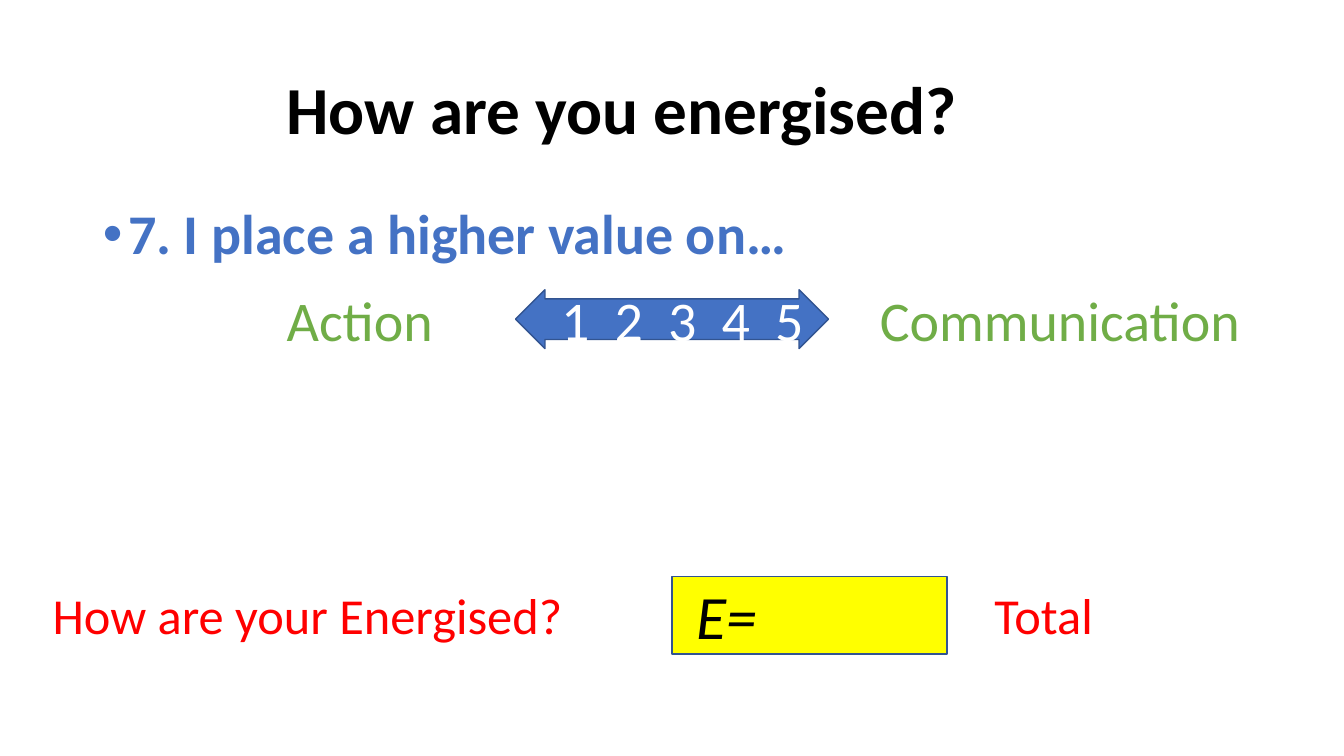
from dataclasses import dataclass
from pptx import Presentation
from pptx.dml.color import RGBColor as Rgb
from pptx.enum.shapes import MSO_SHAPE as Kind
from pptx.enum.text import MSO_ANCHOR as Anchor
from pptx.oxml.ns import qn
from pptx.util import Pt
from lxml.etree import SubElement as sub

PX = 9525  # EMU in one px, 96 px to the inch


@dataclass(frozen=True)
class Theme:
    font: str = "Calibri"
    black: str = "000000"
    white: str = "FFFFFF"
    blue: str = "4472C4"
    edge: str = "325491"
    green: str = "70AD47"
    red: str = "FF0000"
    yellow: str = "FFFF00"
    title: int = 48
    body: int = 40
    total: int = 36
    score: int = 44


LOOK = Theme()


def size(box):
    return [n * PX for n in box]


def write(shape, text, pt, color, bold=None, italic=None, anchor=Anchor.TOP,
          left=10, right=10, tabs=(), bullet=0, space=None):
    """Fill a shape with one paragraph."""
    frame = shape.text_frame
    frame.word_wrap = True
    frame.vertical_anchor = anchor
    frame.margin_left, frame.margin_right = left * PX, right * PX
    para = frame.paragraphs[0]
    para.text = text
    props = para._p.get_or_add_pPr()
    props.set("algn", "l")
    if bullet:
        props.set("marL", str(bullet * PX))
        props.set("indent", str(-bullet * PX))
        sub(props, qn("a:buFont"), typeface="Arial")
        sub(props, qn("a:buChar"), char="•")
    if tabs:
        stops = sub(props, qn("a:tabLst"))
        for pos in tabs:
            sub(stops, qn("a:tab"), pos=str(pos * PX), algn="l")
    if space:
        para.line_spacing = space
    font = para.font
    font.name, font.size = LOOK.font, Pt(pt)
    font.bold, font.italic = bold, italic
    font.color.rgb = Rgb.from_string(color)


def label(slide, box, text, pt, color, **more):
    write(slide.shapes.add_textbox(*size(box)), text, pt, color, **more)


def block(slide, kind, box, fill):
    shape = slide.shapes.add_shape(kind, *size(box))
    shape.shadow.inherit = False
    shape.fill.solid()
    shape.fill.fore_color.rgb = Rgb.from_string(fill)
    shape.line.color.rgb = Rgb.from_string(LOOK.edge)
    shape.line.width = Pt(1)
    return shape


def heading(slide, box):
    label(slide, box, "How are you energised?", LOOK.title, LOOK.black,
          bold=True, anchor=Anchor.MIDDLE, space=0.9)


def question(slide, box):
    label(slide, box, "7. I place a higher value on…", LOOK.body, LOOK.blue,
          bold=True, bullet=24, space=0.9)


def choice(slide, box):
    x, y, w, h = box
    # Scale from 1 to 5
    arrow = block(slide, Kind.LEFT_RIGHT_ARROW, (x + 228, y + 9, 298, 56), LOOK.blue)
    arrow.adjustments[0], arrow.adjustments[1] = 0.69, 0.5
    write(arrow, "\t".join("12345"), LOOK.body, LOOK.white, anchor=Anchor.MIDDLE,
          left=24, right=0, tabs=[51 * n for n in range(1, 5)])
    # The two ends of the scale
    for dx, wide, text in ((0, 341, "Action"), (w - 378, 378, "Communication")):
        label(slide, (x + dx, y, wide, h), text, LOOK.body, LOOK.green)


def result(slide, box):
    x, y, w, h = box
    label(slide, (x, y + 3, w, h - 6), "How are your Energised?\tTotal",
          LOOK.total, LOOK.red, tabs=[897])
    # Score field
    field = block(slide, Kind.RECTANGLE, (x + 600, y, 262, h), LOOK.yellow)
    write(field, "E=", LOOK.score, LOOK.black, italic=True,
          anchor=Anchor.MIDDLE, left=23)


def main():
    deck = Presentation()
    deck.slide_width, deck.slide_height = size((1280, 720))
    slide = deck.slides.add_slide(deck.slide_layouts[6])
    heading(slide, (263, 38, 929, 139))
    question(slide, (88, 192, 1179, 514))
    choice(slide, (263, 267, 943, 74))
    result(slide, (40, 549, 1127, 74))
    deck.save("out.pptx")


if __name__ == "__main__":
    main()
